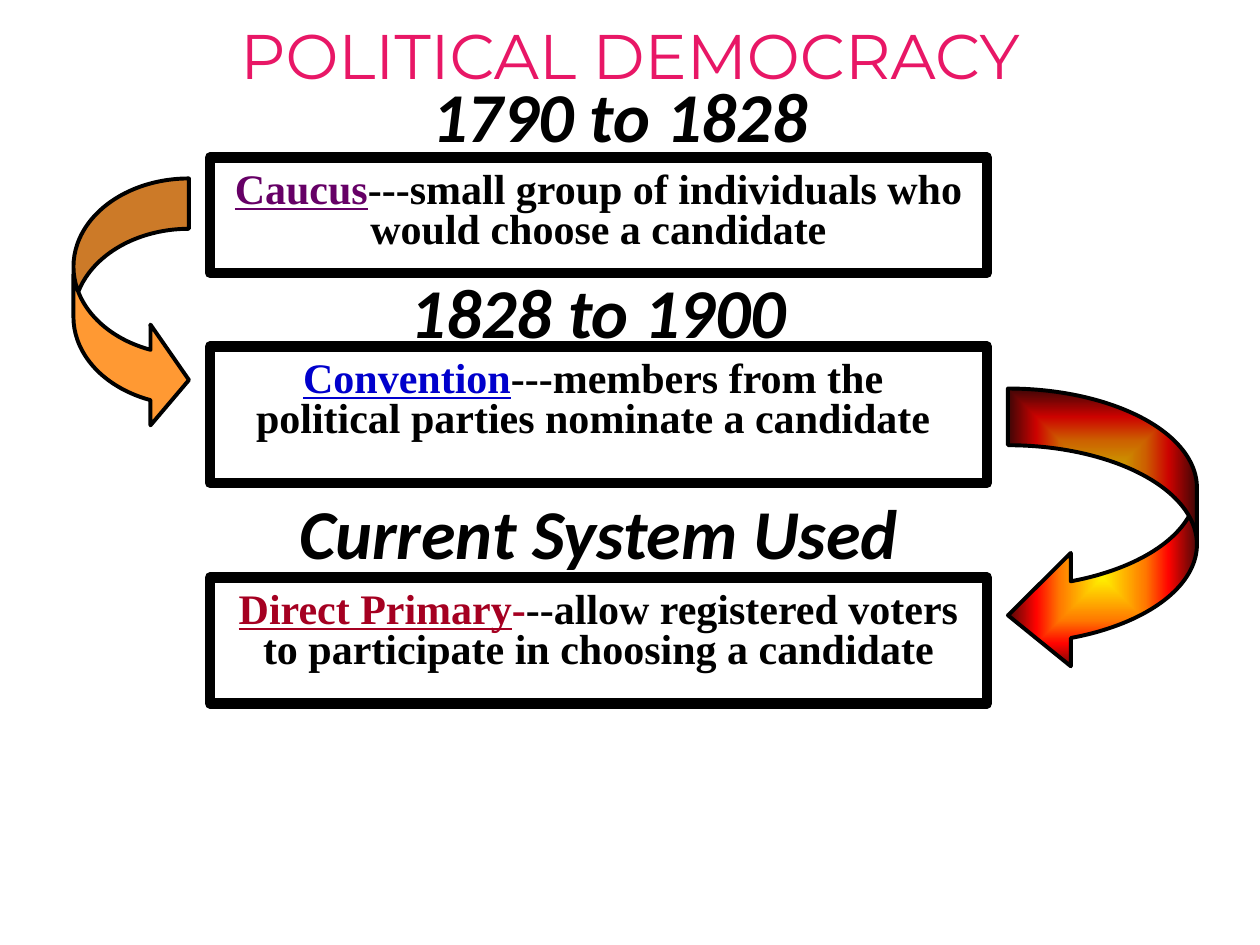
from pptx import Presentation
from pptx import util as u
from pptx.dml.color import RGBColor
from pptx.enum import shapes, text
from pptx.oxml.ns import qn
from pptx.oxml.xmlchemy import OxmlElement

Pt = u.Pt
BLACK = RGBColor(0x00, 0x00, 0x00)
PINK = RGBColor(0xE8, 0x17, 0x66)
PURPLE = RGBColor(0x66, 0x00, 0x66)
BLUE = RGBColor(0x00, 0x00, 0xCC)
CRIMSON = RGBColor(0xA5, 0x00, 0x21)
ORANGE = RGBColor(0xFF, 0x99, 0x33)
YELLOW = RGBColor(0xFF, 0xF2, 0x00)
AMBER = RGBColor(0xFF, 0x7A, 0x00)
RED = RGBColor(0xFF, 0x03, 0x00)
MAROON = RGBColor(0x4D, 0x08, 0x08)


def add_span(para, words, *, font, size, color=BLACK, bold=False, italic=False,
             underline=False):
    span = para.add_run()
    span.text = words
    span.font.name = font
    span.font.size = Pt(size)
    span.font.color.rgb = color
    span.font.bold = bold
    span.font.italic = italic
    span.font.underline = underline


def add_outlined(kind, left, top, width, height, line_width):
    """Add an unfilled preset shape with a black outline."""
    shape = page.shapes.add_shape(kind, Pt(left), Pt(top), Pt(width), Pt(height))
    shape.shadow.inherit = False
    shape.fill.background()
    shape.line.color.rgb = BLACK
    shape.line.width = Pt(line_width)
    return shape


deck = Presentation()
deck.slide_width, deck.slide_height = Pt(720), Pt(540)
page = deck.slides.add_slide(deck.slide_layouts[5])

# Title
title = page.shapes.title
title.left, title.top, title.width, title.height = Pt(24), Pt(6), Pt(672), Pt(36)
frame = title.text_frame
frame.auto_size = text.MSO_AUTO_SIZE.NONE
frame.vertical_anchor = text.MSO_ANCHOR.TOP
frame.paragraphs[0].alignment = text.PP_ALIGN.CENTER
add_span(frame.paragraphs[0], "POLITICAL DEMOCRACY", font="Montserrat", size=36,
         color=PINK)

# Framed definitions: frame top and height, text width, coloured and black parts
definitions = [
    (90, 66, 432, PURPLE, "Caucus", "",
     "---small group of individuals who would choose a candidate"),
    (198, 78, 426, BLUE, "Convention", "",
     "---members from the political parties nominate a candidate"),
    (330, 72, 432, CRIMSON, "Direct Primary", "-",
     "--allow registered voters to participate in choosing a candidate"),
]
for top, height, width, color, term, dash, meaning in definitions:
    add_outlined(shapes.MSO_SHAPE.RECTANGLE, 120, top, 444, height, 6)
    box = page.shapes.add_textbox(Pt(126), Pt(top + 5), Pt(width), Pt(53))
    box.text_frame.word_wrap = True
    para = box.text_frame.paragraphs[0]
    para.alignment = text.PP_ALIGN.CENTER
    para.line_spacing = 0.8
    style = {"font": "Times New Roman", "size": 24, "bold": True}
    add_span(para, term, color=color, underline=True, **style)
    if dash:
        add_span(para, dash, color=color, **style)
    add_span(para, meaning, **style)

# Arrows from each system to the next
first_arrow = add_outlined(shapes.MSO_SHAPE.CURVED_RIGHT_ARROW, 42, 102, 66, 144, 2.25)
first_arrow.fill.solid()
first_arrow.fill.fore_color.rgb = ORANGE
second_arrow = add_outlined(shapes.MSO_SHAPE.CURVED_LEFT_ARROW, 576, 222, 108, 162, 2.25)
for arrow, adjustments in ((first_arrow, (0.436, 0.873, 0.333)),
                           (second_arrow, (0.3, 0.6, 0.333))):
    for index, value in enumerate(adjustments):
        arrow.adjustments[index] = value

# Rectangular gradient spreading from the centre of the second arrow
second_arrow.fill.gradient()
gradient = second_arrow._element.spPr.find(qn("a:gradFill"))
for child in list(gradient):
    gradient.remove(child)
stops = OxmlElement("a:gsLst")
for percent, color in ((0, YELLOW), (45, AMBER), (70, RED), (100, MAROON)):
    stop = OxmlElement("a:gs")
    stop.set("pos", str(percent * 1000))
    paint = OxmlElement("a:srgbClr")
    paint.set("val", str(color))
    stop.append(paint)
    stops.append(stop)
spread = OxmlElement("a:path")
spread.set("path", "rect")
centre = OxmlElement("a:fillToRect")
for side in "ltrb":
    centre.set(side, "50000")
spread.append(centre)
gradient.append(stops)
gradient.append(spread)

# Period headings
headings = [
    ("1790 to 1828", 240, 38, 246, text.PP_ALIGN.LEFT),
    ("1828 to 1900", 120, 150, 444, text.PP_ALIGN.CENTER),
    ("Current System Used", 120, 276, 444, text.PP_ALIGN.CENTER),
]
for words, left, top, width, alignment in headings:
    box = page.shapes.add_textbox(Pt(left), Pt(top), Pt(width), Pt(55.5))
    box.text_frame.word_wrap = True
    para = box.text_frame.paragraphs[0]
    para.alignment = alignment
    add_span(para, words, font="Calibri", size=40, bold=True, italic=True)

deck.save("out.pptx")
